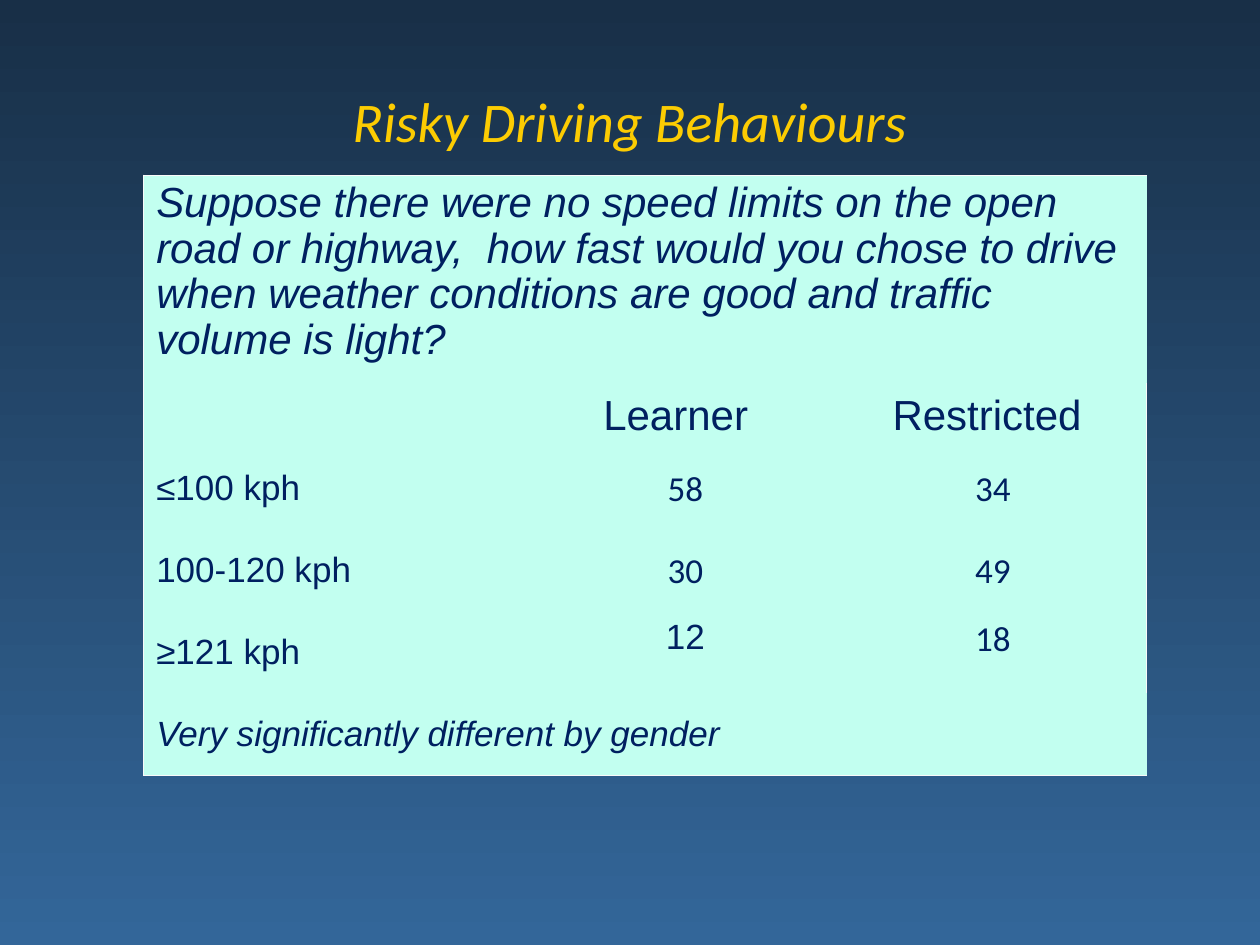
import pptx
import pptx.dml.color
import pptx.enum.text
import pptx.oxml.ns
import pptx.util
from lxml import etree

Inches = pptx.util.Inches
Pt = pptx.util.Pt
PP_ALIGN = pptx.enum.text.PP_ALIGN
MSO_ANCHOR = pptx.enum.text.MSO_ANCHOR
qn = pptx.oxml.ns.qn

NAVY, MINT, GOLD, BORDER = "002060", "C2FFF0", "FCCC02", "F9F9F9"
QUESTION = ("Suppose there were no speed limits on the open road or highway,  "
            "how fast would you chose to drive when weather conditions are "
            "good and traffic volume is light?")
HEADINGS = [[("Learner ", 24, "Arial"), (" ", 20, "Calibri")],
            [("Restricted ", 24, "Arial")]]
SPEEDS = [("≤100 kph", "58", "34"),
          ("100-120 kph", "30", "49"),
          ("≥121 kph", "12", "18")]
COLUMN_WIDTHS = [3.08, 2.44, 2.44]
ROW_HEIGHTS = [1.58, 0.51] + [0.65] * 4


def rgb(color):
    """Turn a hex string into a colour."""
    return pptx.dml.color.RGBColor.from_string(color)


def add_run(p, text, size, font, color=NAVY, italic=False):
    """Append one formatted run to a paragraph."""
    r = p.add_run()
    r.text = text
    r.font.size = Pt(size)
    r.font.name = font
    r.font.italic = italic
    r.font.color.rgb = rgb(color)


def set_background(s, top, bottom):
    """Give the slide a gradient running from top to bottom."""
    fill = s.background.fill
    fill.gradient()
    fill.gradient_angle = 270
    for stop, color in zip(fill.gradient_stops, (top, bottom)):
        stop.color.rgb = rgb(color)


def add_title(s, text):
    """Add the centred slide title."""
    sp = s.shapes.add_textbox(Inches(0.51), Inches(0.33), Inches(8.98), Inches(1.25))
    tf = sp.text_frame
    tf.word_wrap = True
    tf.vertical_anchor = MSO_ANCHOR.MIDDLE
    p = tf.paragraphs[0]
    p.alignment = PP_ALIGN.CENTER
    add_run(p, text, 32, "Calibri", GOLD, True)


def set_border(cell, side, visible):
    """Draw or hide the border on one side of a cell."""
    ln = etree.SubElement(cell._tc.get_or_add_tcPr(), qn("a:ln" + side))
    ln.set("w", str(Pt(0.75)))
    if visible:
        fill = etree.SubElement(ln, qn("a:solidFill"))
        etree.SubElement(fill, qn("a:srgbClr")).set("val", BORDER)
    else:
        etree.SubElement(ln, qn("a:noFill"))


def add_survey_table(s):
    """Add the table with its outer border and plain mint cells."""
    rows, cols = len(ROW_HEIGHTS), len(COLUMN_WIDTHS)
    table = s.shapes.add_table(rows, cols, Inches(1.14), Inches(1.39),
                               Inches(sum(COLUMN_WIDTHS)),
                               Inches(sum(ROW_HEIGHTS))).table
    table.first_row = table.horz_banding = False
    for column, width in zip(table.columns, COLUMN_WIDTHS):
        column.width = Inches(width)
    for row, height in zip(table.rows, ROW_HEIGHTS):
        row.height = Inches(height)
    for i in range(rows):
        for j in range(cols):
            cell = table.cell(i, j)
            edges = {"L": j == 0, "R": j == cols - 1, "T": i == 0, "B": i == rows - 1}
            for side, visible in edges.items():
                set_border(cell, side, visible)
            cell.fill.solid()
            cell.fill.fore_color.rgb = rgb(MINT)
    for i in (0, rows - 1):
        table.cell(i, 0).merge(table.cell(i, cols - 1))
    return table


def fill_text_cell(cell, text, size=20, italic=False, anchor=MSO_ANCHOR.MIDDLE):
    """Write left-aligned text in a cell."""
    cell.vertical_anchor = anchor
    p = cell.text_frame.paragraphs[0]
    add_run(p, text, size, "Arial", italic=italic)
    return p


def fill_centred_cell(cell, runs, top=False):
    """Write centred runs in a cell, at the top or tight in the middle."""
    if not top:
        cell.vertical_anchor = MSO_ANCHOR.MIDDLE
        cell.margin_left = cell.margin_right = cell.margin_top = Inches(0.01)
        cell.margin_bottom = 0
    p = cell.text_frame.paragraphs[0]
    p.alignment = PP_ALIGN.CENTER
    for text, size, font in runs:
        add_run(p, text, size, font)


def main():
    """Build the slide and save it."""
    prs = pptx.Presentation()
    prs.slide_width, prs.slide_height = Inches(10), Inches(7.5)
    s = prs.slides.add_slide(prs.slide_layouts[6])
    set_background(s, "182F47", "336699")
    add_title(s, "Risky Driving Behaviours")
    table = add_survey_table(s)
    p = fill_text_cell(table.cell(0, 0), QUESTION, 24, True, MSO_ANCHOR.TOP)
    p.line_spacing = 0.97
    for j, runs in enumerate(HEADINGS, 1):
        fill_centred_cell(table.cell(1, j), runs)
    for i, (speed, *values) in enumerate(SPEEDS, 2):
        fill_text_cell(table.cell(i, 0), speed)
        for j, value in enumerate(values, 1):
            font = "Arial" if value == "12" else "Calibri"
            fill_centred_cell(table.cell(i, j), [(value, 20, font)], speed == "≥121 kph")
    fill_text_cell(table.cell(5, 0), "Very significantly different by gender", italic=True)
    prs.save("out.pptx")


if __name__ == "__main__":
    main()
